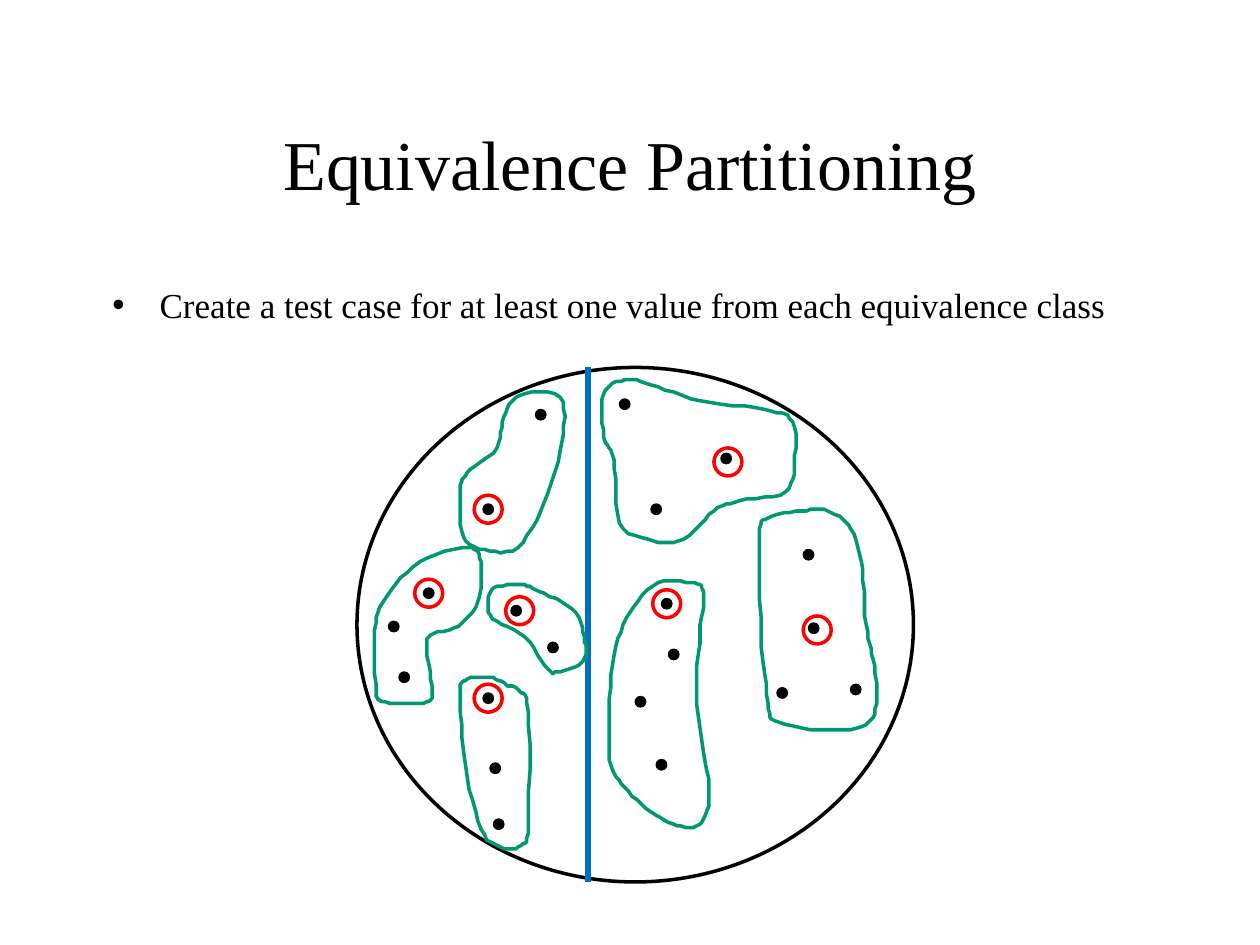
"""Build a slide on equivalence partitioning with a divided circle of test values."""
from pptx import Presentation
from pptx.dml.color import RGBColor as RGB
from pptx.enum.shapes import MSO_CONNECTOR as LINK, MSO_SHAPE as FORM
from pptx.enum.text import MSO_ANCHOR as ANCHOR, MSO_AUTO_SIZE as AUTO, PP_ALIGN as ALIGN
from pptx.oxml import parse_xml
from pptx.oxml.ns import nsdecls
from pptx.util import Pt

HUES = {"ink": "000000", "class": "009771", "pick": "FF0000", "split": "0070C0"}

TEXTS = [
    ("Equivalence Partitioning", (54, 48, 612, 90), Pt(40),
     {"alignment": ALIGN.CENTER, "space_before": Pt(0)}, ANCHOR.MIDDLE),
    ("Create a test case for at least one value from each equivalence class",
     (57, 158.5, 612, 66), Pt(20),
     {"alignment": ALIGN.LEFT, "space_before": Pt(4)}, ANCHOR.TOP),
]

DOTS = [
    (372, 288), (354, 228), (459, 314), (378, 342), (306, 234), (276, 288),
    (222, 355), (276, 396), (282, 468), (292, 346), (313, 367), (462, 356),
    (444, 393), (486, 391), (242, 336), (228, 384), (280, 436),
    (375, 434), (363, 398), (382, 371), (412, 259),
]

PICKS = [(459, 352), (373, 337), (271, 391), (289, 341), (271, 283), (237, 331), (408, 256)]

LOOPS = [
    [(320, 227), (297, 226), (288, 238), (284, 256), (267, 270), (263, 282),
     (265, 307), (277, 314), (296, 313), (311, 287), (321, 253)],
    [(267, 313), (240, 321), (221, 341), (214, 360), (215, 395), (220, 401),
     (242, 402), (247, 395), (244, 372), (246, 363), (262, 358), (273, 344), (275, 321)],
    [(289, 391), (280, 387), (267, 388), (263, 396), (266, 437), (275, 474),
     (286, 484), (298, 483), (302, 471), (302, 407), (297, 395)],
    [(376, 333), (360, 350), (351, 374), (348, 412), (349, 437), (357, 450),
     (372, 464), (387, 472), (400, 471), (405, 458), (404, 441), (398, 402),
     (400, 362), (402, 338), (395, 333)],
    [(372, 220), (357, 217), (345, 225), (345, 250), (351, 263), (354, 299),
     (373, 309), (391, 308), (408, 292), (423, 286), (449, 281), (454, 264),
     (453, 241), (437, 234), (400, 229)],
    [(318, 384), (333, 378), (334, 364), (327, 348), (308, 338), (298, 334),
     (282, 336), (279, 346), (282, 354), (300, 364), (313, 382)],
    [(458, 292), (439, 296), (434, 306), (435, 362), (439, 402), (443, 412),
     (467, 417), (493, 415), (501, 402), (499, 377), (495, 357), (492, 320),
     (485, 300), (473, 292)],
]
STEPS = 6


def curve(knots):
    points = []
    for i, (b, c) in enumerate(zip(knots, knots[1:] + knots[:1])):
        a, d = knots[i - 1], knots[(i + 2) % len(knots)]
        for step in range(STEPS):
            t = step / STEPS
            points.append(tuple(
                q + t / 2 * (r - p + t * (2 * p - 5 * q + 4 * r - s
                                          + t * (3 * (q - r) + s - p)))
                for p, q, r, s in zip(a, b, c, d)))
    return points


def paint(shape, hue, width, solid=False):
    shape.shadow.inherit = False
    shape.line.color.rgb = RGB.from_string(HUES[hue])
    shape.line.width = Pt(width)
    if solid:
        shape.fill.solid()
        shape.fill.fore_color.rgb = RGB.from_string(HUES[hue])
    else:
        shape.fill.background()


deck = Presentation()
deck.slide_width, deck.slide_height = Pt(720), Pt(540)
slide = deck.slides.add_slide(deck.slide_layouts[1])
shapes = slide.shapes

for holder, (words, box, size, style, anchor) in zip(slide.placeholders, TEXTS):
    holder.left, holder.top, holder.width, holder.height = map(Pt, box)
    frame = holder.text_frame
    frame.text = words
    frame.auto_size = AUTO.NONE
    frame.vertical_anchor = anchor
    para = frame.paragraphs[0]
    for name, value in style.items():
        setattr(para, name, value)
    font = para.runs[0].font
    for name, value in {"name": "Times New Roman", "size": size}.items():
        setattr(font, name, value)
    font.color.rgb = RGB.from_string(HUES["ink"])

props = para._p.get_or_add_pPr()
for name, value in {"marL": Pt(27), "indent": Pt(-27)}.items():
    props.set(name, str(value))
props.append(parse_xml(f'<a:buChar {nsdecls("a")} char="•"/>'))

domain = shapes.add_shape(FORM.OVAL, Pt(204), Pt(210), Pt(318), Pt(294))
paint(domain, "ink", 2)

split = shapes.add_connector(LINK.STRAIGHT, Pt(336), Pt(210), Pt(336), Pt(504))
split.line.color.rgb = RGB.from_string(HUES["split"])
split.line.width = Pt(3)
split._element.spPr.append(parse_xml(f'<a:effectLst {nsdecls("a")}/>'))

for knots in LOOPS:
    start, *rest = curve(knots)
    pen = shapes.build_freeform(*start, scale=Pt(1))
    pen.add_line_segments([(round(x, 2), round(y, 2)) for x, y in rest], close=True)
    paint(pen.convert_to_shape(), "class", 2)

for spots, size, hue, width, solid in [
    (DOTS, 6, "ink", 0.75, True),
    (PICKS, 16, "pick", 2, False),
]:
    for left, top in spots:
        mark = shapes.add_shape(FORM.OVAL, Pt(left), Pt(top), Pt(size), Pt(size))
        paint(mark, hue, width, solid)

deck.save("out.pptx")
